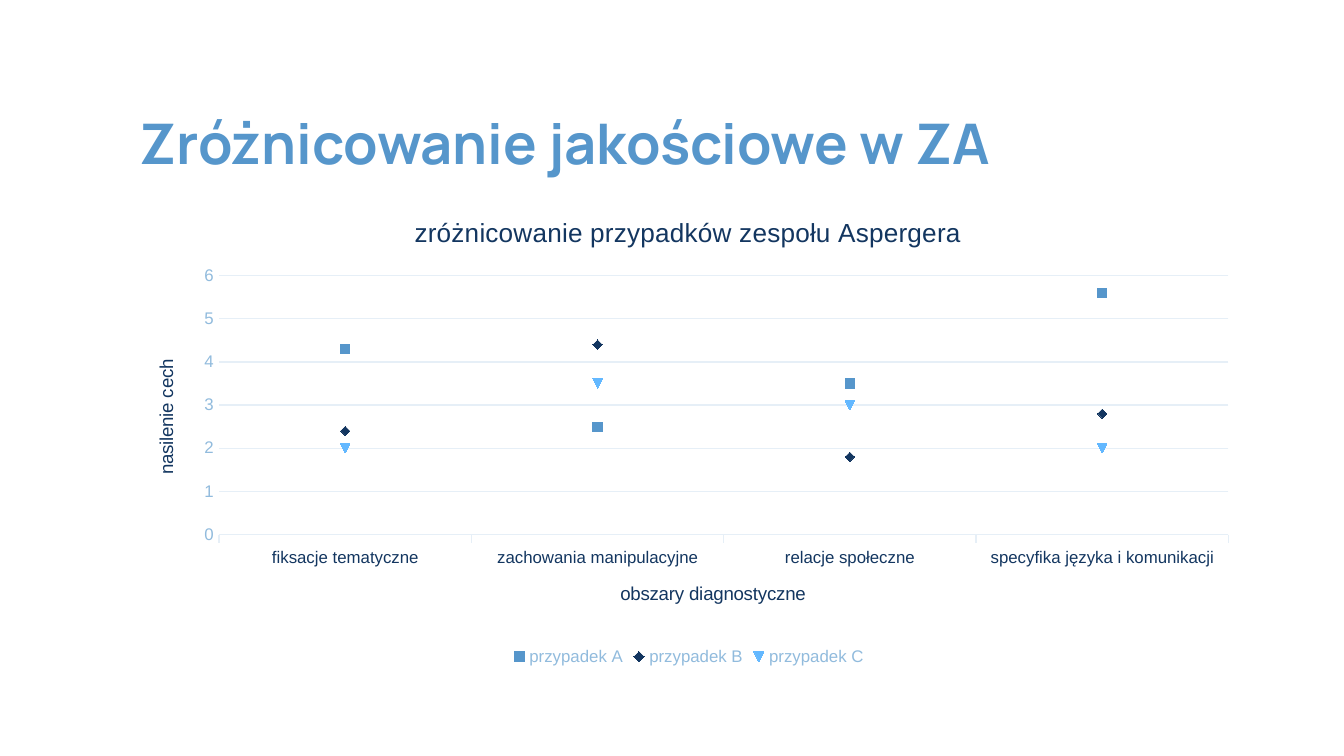
from lxml import etree
from pptx import Presentation
from pptx.chart.data import CategoryChartData
from pptx.dml.color import RGBColor
from pptx.enum.chart import (XL_CHART_TYPE as ChartType, XL_LEGEND_POSITION as LegendPos,
                             XL_MARKER_STYLE as Marker, XL_TICK_MARK as Tick)
from pptx.enum.text import MSO_ANCHOR as Anchor
from pptx.oxml.ns import qn
from pptx.util import Inches, Pt

# Content
HEADING = "Zróżnicowanie jakościowe w ZA"
CHART_TITLE = "zróżnicowanie przypadków zespołu Aspergera"
AREA_TITLE = "obszary diagnostyczne"
INTENSITY_TITLE = "nasilenie cech"
AREAS = ["fiksacje tematyczne", "zachowania manipulacyjne",
         "relacje społeczne", "specyfika języka i komunikacji"]
CASES = {
    "przypadek A": (4.3, 2.5, 3.5, 5.6),
    "przypadek B": (2.4, 4.4, 1.8, 2.8),
    "przypadek C": (2, 3.5, 3, 2),
}

THEME = {
    "heading": "5696CB", "dark": "133660", "bright": "63B8FF",
    "soft": "91BBDD", "grid": "E6EFF7",
    "heading_font": "Manrope", "chart_font": "Arial",
    "heading_size": 30, "title_size": 14, "axis_title_size": 10, "label_size": 9,
}
CASE_TINTS = ("heading", "dark", "bright")
CHART_W, CHART_H = 8.37, 3.55


def color(name):
    return RGBColor.from_string(THEME[name])


def style(font, size, tint, face="chart_font", bold=False):
    font.name, font.size, font.bold = THEME[face], Pt(THEME[size]), bold
    font.color.rgb = color(tint)


def write(frame, text, **look):
    run = frame.paragraphs[0].add_run()
    run.text = text
    style(run.font, **look)


def place(parent, index, x, y, w=None, h=None):
    """Place a chart part, given in inches from the chart's corner."""
    for old in parent.findall(qn("c:layout")):
        parent.remove(old)
    layout = etree.Element(qn("c:layout"))
    manual = etree.SubElement(layout, qn("c:manualLayout"))
    settings = {"layoutTarget": "inner"} if w else {}
    settings.update(xMode="edge", yMode="edge", x=x / CHART_W, y=y / CHART_H)
    if w:
        settings.update(w=w / CHART_W, h=h / CHART_H)
    for tag, value in settings.items():
        etree.SubElement(manual, qn("c:" + tag)).set("val", str(value))
    parent.insert(index, layout)


def add_title(owner, text, size, x, y, turned=False):
    title = owner.chart_title if hasattr(owner, "chart_title") else owner.axis_title
    write(title.text_frame, text, size=size, tint="dark")
    body = title._element.find(".//" + qn("a:bodyPr"))
    body.set("rot", "-5400000" if turned else "0")
    place(title._element, 1, x, y)


def line_style(line, tint):
    line.color.rgb = color(tint)
    line.width = Pt(0.75)


prs = Presentation()
prs.slide_width = Inches(10)
prs.slide_height = Inches(10) * 9 // 16
slide = prs.slides.add_slide(prs.slide_layouts[6])

# Heading
heading = slide.shapes.add_textbox(Inches(0.94), Inches(0.5), Inches(8.1), Inches(1.11)).text_frame
heading.word_wrap = True
heading.vertical_anchor = Anchor.MIDDLE
heading.margin_left = heading.margin_right = Inches(0.1)
heading.margin_top = heading.margin_bottom = Inches(0.1)
write(heading, HEADING, size="heading_size", tint="heading", face="heading_font", bold=True)

# Chart
case_data = CategoryChartData()
case_data.categories = AREAS
for case, intensities in CASES.items():
    case_data.add_series(case, intensities)
chart = slide.shapes.add_chart(ChartType.LINE_MARKERS, Inches(0.94), Inches(1.45),
                               Inches(CHART_W), Inches(CHART_H), case_data).chart
style(chart.font, "axis_title_size", "heading")
chart.has_title = True
add_title(chart, CHART_TITLE, "title_size", x=2.11, y=0.12)
place(chart._chartSpace.chart.plotArea, 0, x=0.69, y=0.6, w=7.51, h=1.93)

# Markers only, without joining lines
chart.plots[0].vary_by_categories = False
for case, tint in zip(chart.plots[0].series, CASE_TINTS):
    case.smooth = False
    case.format.line.fill.background()
    case.marker.style = Marker.AUTOMATIC
    case.marker.size = 5
    case.marker.format.fill.solid()
    case.marker.format.fill.fore_color.rgb = color(tint)
    case.marker.format.line.fill.background()

# Axes
areas = chart.category_axis
areas.major_tick_mark, areas.minor_tick_mark = Tick.OUTSIDE, Tick.NONE
style(areas.tick_labels.font, "label_size", "dark")
line_style(areas.format.line, "grid")
add_title(areas, AREA_TITLE, "axis_title_size", x=3.65, y=2.85)

intensity = chart.value_axis
intensity.minimum_scale, intensity.maximum_scale, intensity.major_unit = 0, 6, 1
intensity.major_tick_mark = intensity.minor_tick_mark = Tick.NONE
style(intensity.tick_labels.font, "label_size", "soft")
intensity.format.line.fill.background()
line_style(intensity.major_gridlines.format.line, "grid")
add_title(intensity, INTENSITY_TITLE, "axis_title_size", x=0.18, y=1.2, turned=True)

# Legend
chart.has_legend = True
chart.legend.position = LegendPos.BOTTOM
chart.legend.include_in_layout = False
style(chart.legend.font, "label_size", "soft")

prs.save("out.pptx")
